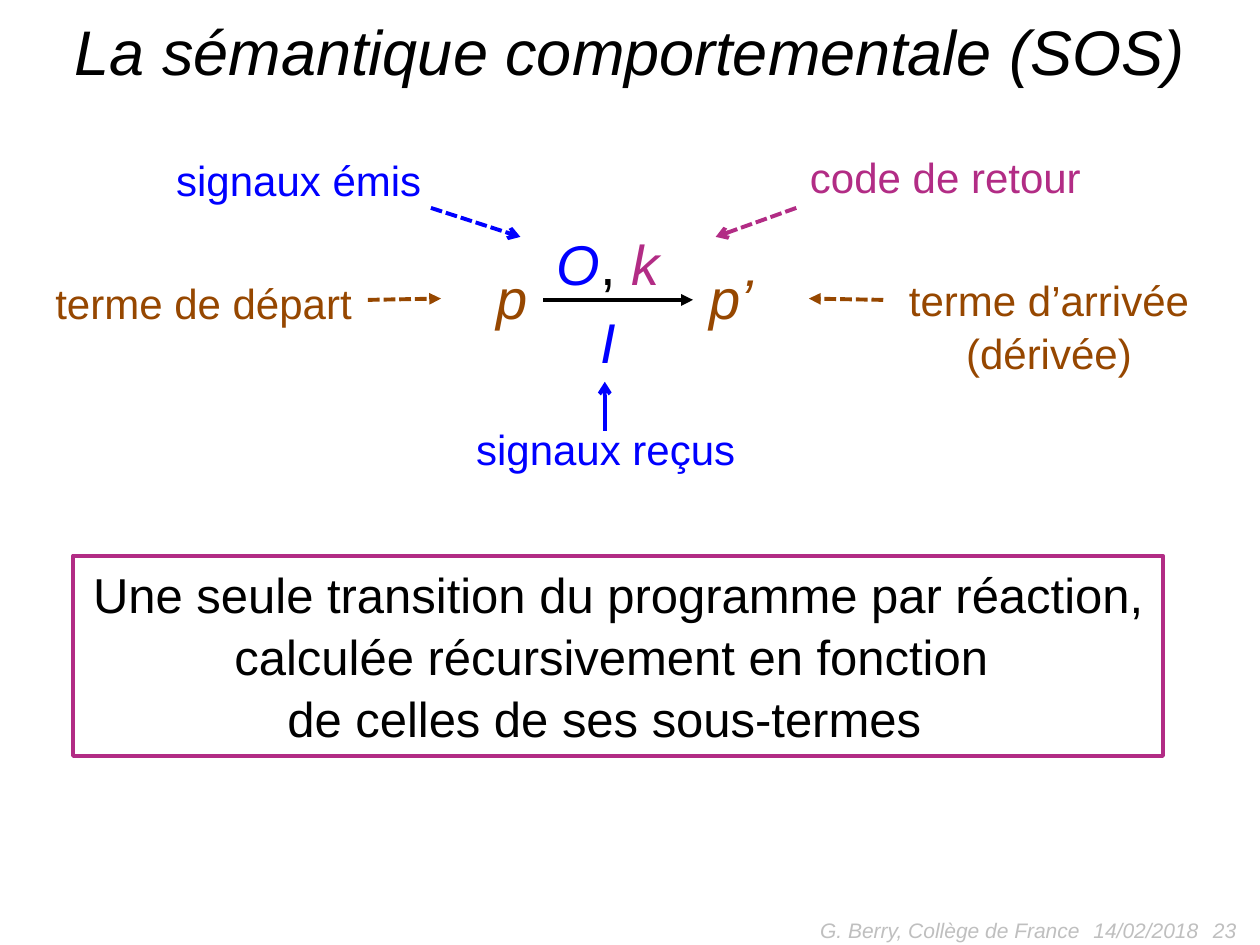
from dataclasses import dataclass
from typing import Optional

from lxml import etree
from pptx import Presentation
from pptx.dml.color import RGBColor
from pptx.enum.dml import MSO_LINE
from pptx.enum.shapes import MSO_CONNECTOR, MSO_SHAPE
from pptx.enum.text import MSO_ANCHOR, PP_ALIGN
from pptx.oxml.ns import qn
from pptx.util import Inches, Pt

LEFT, CENTER, RIGHT = PP_ALIGN.LEFT, PP_ALIGN.CENTER, PP_ALIGN.RIGHT
TOP, MIDDLE = MSO_ANCHOR.TOP, MSO_ANCHOR.MIDDLE
STRAIGHT = MSO_CONNECTOR.STRAIGHT
RECTANGLE = MSO_SHAPE.RECTANGLE
DASH = MSO_LINE.SQUARE_DOT
RIGHT_SIDE = 3

FONT = "Arial"
BLACK, BLUE, PURPLE, BROWN, GRAY = "000000", "0000FF", "B22C85", "964700", "BFBFBF"
LINE_WIDTH = 2.25


@dataclass
class Span:
    text: str
    color: str
    italic: bool = False


@dataclass
class Label:
    """A text box whose lines are lists of spans."""
    left: float
    top: float
    width: float
    height: float
    lines: list[list[Span]]
    size: float
    align: PP_ALIGN = LEFT
    anchor: MSO_ANCHOR = TOP
    spacing: float = 1.0
    wrap: bool = False


@dataclass
class Arrow:
    start: tuple[float, float]
    end: tuple[float, float]
    color: str
    head: str = "triangle"
    dashed: bool = True


def rgb(color: str) -> RGBColor:
    return RGBColor.from_string(color)


def write_lines(frame, lines: list[list[Span]], size: float, align: PP_ALIGN,
                spacing: float = 1.0) -> None:
    for index, spans in enumerate(lines):
        para = frame.paragraphs[0] if index == 0 else frame.add_paragraph()
        para.alignment = align
        para.line_spacing = spacing
        para.space_before = Pt(0)
        for span in spans:
            run = para.add_run()
            run.text = span.text
            run.font.name = FONT
            run.font.size = Pt(size)
            run.font.italic = span.italic
            run.font.color.rgb = rgb(span.color)


def add_label(page, label: Label):
    box = page.shapes.add_textbox(Inches(label.left), Inches(label.top),
                                  Inches(label.width), Inches(label.height))
    frame = box.text_frame
    frame.word_wrap = label.wrap
    frame.vertical_anchor = label.anchor
    write_lines(frame, label.lines, label.size, label.align, label.spacing)
    return box


def add_arrow(page, arrow: Arrow, source: Optional[object] = None) -> None:
    ends = [Inches(value) for value in (*arrow.start, *arrow.end)]
    connector = page.shapes.add_connector(STRAIGHT, *ends)
    if source is not None:
        connector.begin_connect(source, RIGHT_SIDE)
    line = connector.line
    line.color.rgb = rgb(arrow.color)
    line.width = Pt(LINE_WIDTH)
    if arrow.dashed:
        line.dash_style = DASH
    # Arrowhead, and no theme shadow
    properties = connector._element.spPr
    etree.SubElement(properties.find(qn("a:ln")), qn("a:tailEnd"), type=arrow.head)
    etree.SubElement(properties, qn("a:effectLst"))


def add_title(page, text: str) -> None:
    title = page.shapes.title
    title.left, title.top = Inches(0.25), Inches(0.05)
    title.width, title.height = Inches(9.5), Inches(0.71)
    title.text_frame.vertical_anchor = TOP
    write_lines(title.text_frame, [[Span(text, BLACK, True)]], 36, CENTER)


def add_conclusion(page, lines: list[str], right_indents: list[float]) -> None:
    box = page.shapes.add_shape(RECTANGLE, Inches(0.58), Inches(4.41),
                                Inches(8.65), Inches(1.59))
    box.shadow.inherit = False
    box.fill.background()
    box.line.color.rgb = rgb(PURPLE)
    box.line.width = Pt(LINE_WIDTH)
    frame = box.text_frame
    frame.word_wrap = False
    frame.vertical_anchor = TOP
    write_lines(frame, [[Span(line, BLACK)] for line in lines], 28, CENTER, 1.05)
    for para, indent in zip(frame.paragraphs, right_indents):
        para._p.get_or_add_pPr().set("marR", str(Inches(indent)))


def footer(left: float, width: float, text: str, align: PP_ALIGN) -> Label:
    return Label(left, 7.18, width, 0.4, [[Span(text, GRAY, True)]], 12, align,
                 MIDDLE, wrap=True)


def term(left: float, top: float, width: float, *spans: Span) -> Label:
    return Label(left, top, width, 0.64, [list(spans)], 32)


def caption(left: float, top: float, width: float, text: str, color: str) -> Label:
    return Label(left, top, width, 0.5, [[Span(text, color)]], 24)


FOOTERS = [
    footer(8.58, 2.33, "14/02/2018", LEFT),
    footer(7.58, 2.33, "23", RIGHT),
    footer(5.5, 3.17, "G. Berry, Collège de France", RIGHT),
]
# Transition rule: p goes to p’ under O, k and I
TERMS = [
    term(3.84, 2.04, 0.45, Span("p", BROWN, True)),
    term(4.67, 2.39, 0.32, Span("I", BLUE, True)),
    term(4.32, 1.77, 1.02, Span("O", BLUE, True), Span(", ", BLACK),
         Span("k", PURPLE, True)),
    term(5.53, 2.04, 0.55, Span("p’", BROWN, True)),
]
CAPTIONS = [
    caption(1.3, 1.18, 2.17, "signaux émis", BLUE),
    caption(6.33, 1.15, 2.37, "code de retour", PURPLE),
    caption(3.68, 3.31, 2.28, "signaux reçus", BLUE),
    Label(7.1, 2.11, 2.45, 0.95,
          [[Span("terme d’arrivée", BROWN)], [Span("(dérivée)", BROWN)]],
          24, CENTER, spacing=1.05),
]
START_TERM = Label(0.34, 2.13, 2.58, 0.5, [[Span("terme de départ", BROWN)]],
                   24, spacing=1.05)
START_ARROW = Arrow((2.92, 2.38), (3.5, 2.37), BROWN)
ARROWS = [
    Arrow((4.31, 2.38), (5.5, 2.38), BLACK, dashed=False),
    Arrow((3.42, 1.65), (4.13, 1.88), BLUE, "arrow"),
    Arrow((6.32, 1.65), (5.68, 1.88), PURPLE, "arrow"),
    Arrow((4.8, 3.42), (4.8, 3.03), BLUE, "arrow", dashed=False),
    Arrow((7.01, 2.38), (6.42, 2.37), BROWN),
]


def main() -> None:
    deck = Presentation()
    deck.slide_width, deck.slide_height = Inches(10), Inches(7.5)
    page = deck.slides.add_slide(deck.slide_layouts[5])

    add_title(page, "La sémantique comportementale (SOS)")
    for label in FOOTERS + TERMS + CAPTIONS:
        add_label(page, label)
    for arrow in ARROWS:
        add_arrow(page, arrow)
    add_arrow(page, START_ARROW, add_label(page, START_TERM))

    add_conclusion(page, ["Une seule transition du programme par réaction,",
                          "calculée récursivement en fonction",
                          "de celles de ses sous-termes"], [0, 0.11, 0.22])
    deck.save("out.pptx")


if __name__ == "__main__":
    main()
